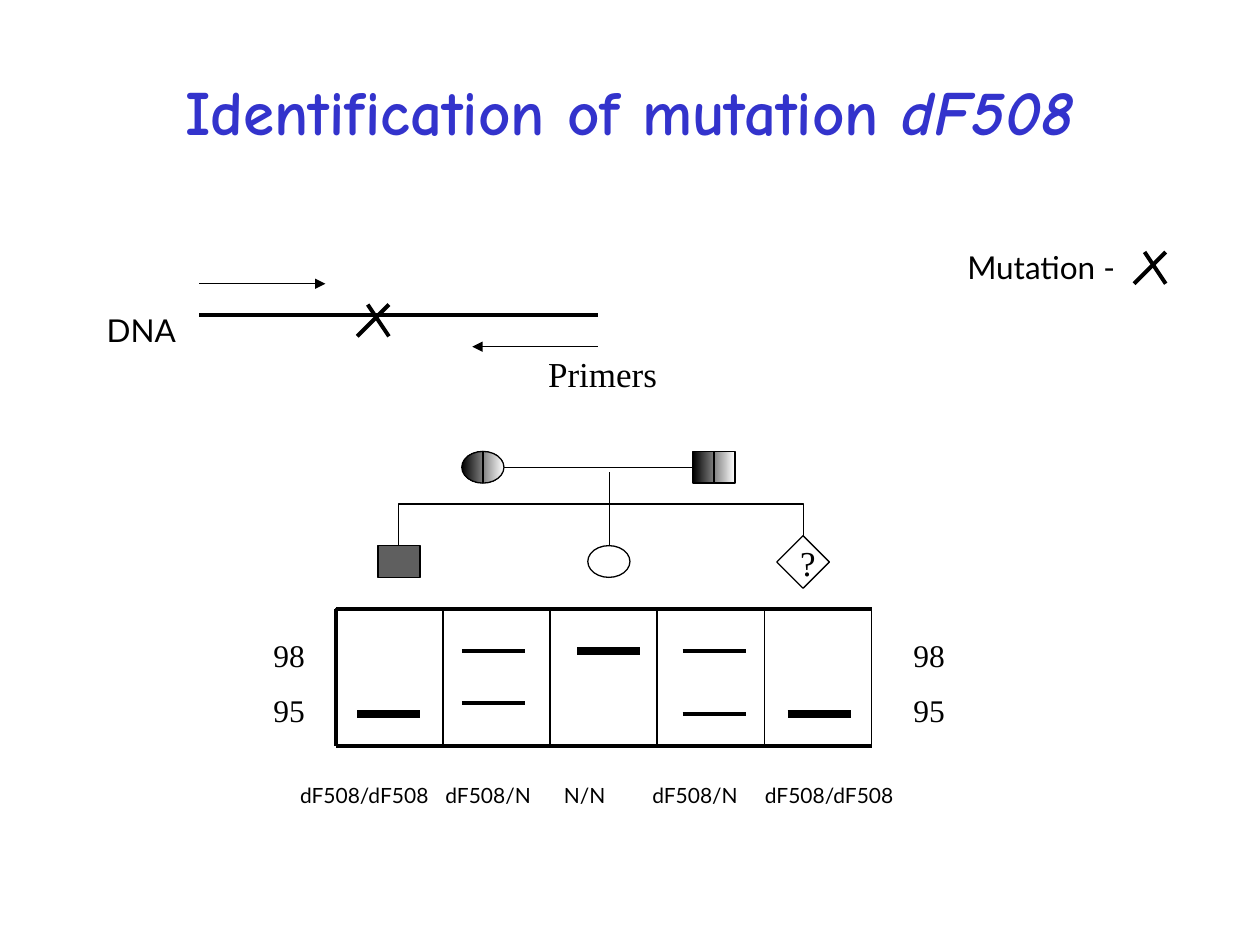
from lxml.etree import SubElement
from pptx import Presentation
from pptx.dml.color import RGBColor
from pptx.enum.shapes import MSO_CONNECTOR, MSO_SHAPE
from pptx.enum.text import MSO_ANCHOR, PP_ALIGN
from pptx.oxml.ns import qn
from pptx.util import Cm, Pt

BLACK, WHITE, GREY, BLUE = "000000", "FFFFFF", "5F5F5F", "3333CC"
SANS, SERIF, TITLE_FONT = "Lato", "Times New Roman", "Comic Neue"
THIN, LANE, THICK, HEAVY = 0.75, 1, 2.25, 4.5


def color(hex_string):
    return RGBColor.from_string(hex_string)


def write(paragraph, text, font=SANS, size=18, ink=BLACK, bold=False, italic=False):
    run = paragraph.add_run()
    run.text = text
    run.font.name, run.font.size = font, Pt(size)
    run.font.bold, run.font.italic = bold, italic
    run.font.color.rgb = color(ink)


class Board:
    """Draws on one slide; all positions are in centimetres."""

    def __init__(self, slide):
        self.slide = slide

    def title(self, left, top, width, height, parts):
        shape = self.slide.shapes.title
        shape.left, shape.top = Cm(left), Cm(top)
        shape.width, shape.height = Cm(width), Cm(height)
        shape.text_frame.vertical_anchor = MSO_ANCHOR.MIDDLE
        paragraph = shape.text_frame.paragraphs[0]
        paragraph.alignment = PP_ALIGN.CENTER
        for text, italic in parts:
            write(paragraph, text, font=TITLE_FONT, size=36, ink=BLUE, bold=True, italic=italic)

    def text(self, left, top, width, height, *lines, align=PP_ALIGN.LEFT, tabs=(), **style):
        box = self.slide.shapes.add_textbox(Cm(left), Cm(top), Cm(width), Cm(height))
        frame = box.text_frame
        frame.word_wrap = True
        for index, line in enumerate(lines):
            paragraph = frame.add_paragraph() if index else frame.paragraphs[0]
            paragraph.alignment = align
            if index:
                paragraph.space_before = Pt(10)
            if tabs:
                tab_list = SubElement(paragraph._p.get_or_add_pPr(), qn("a:tabLst"))
                for tab in tabs:
                    SubElement(tab_list, qn("a:tab"), pos=str(int(Cm(tab))), algn="l")
            write(paragraph, line, **style)

    def line(self, x1, y1, x2, y2, width=THIN, arrow=None, kind=MSO_CONNECTOR.STRAIGHT):
        """arrow names the end with a triangle: headEnd or tailEnd."""
        connector = self.slide.shapes.add_connector(kind, Cm(x1), Cm(y1), Cm(x2), Cm(y2))
        connector.line.color.rgb = color(BLACK)
        connector.line.width = Pt(width)
        properties = connector._element.spPr
        if arrow:
            SubElement(properties.find(qn("a:ln")), qn("a:" + arrow), type="triangle")
        SubElement(properties, qn("a:effectLst"))
        return connector

    def bracket(self, x1, y1, x2, y2, bar_y):
        """Elbow connector that rises to bar_y and comes down again."""
        rise, run = y1 - y2, x2 - x1
        x, y = (x1 + x2) / 2, (y1 + y2) / 2
        connector = self.line(x - rise / 2, y - run / 2, x + rise / 2, y + run / 2,
                              kind=MSO_CONNECTOR.ELBOW)
        properties = connector._element.spPr
        properties.find(qn("a:xfrm")).set("rot", str(270 * 60000))
        adjustments = properties.find(qn("a:prstGeom")).find(qn("a:avLst"))
        share = round((y1 - bar_y) / rise * 100000)
        SubElement(adjustments, qn("a:gd"), name="adj1", fmla=f"val {share}")

    def cross(self, left, top, size=0.64):
        self.line(left + size / 3, top, left + size, top + size, THICK)
        self.line(left, top + size, left + size, top, THICK)

    def shape(self, kind, left, top, width, height, fill=None):
        """fill is one colour, a pair for a gradient, or None."""
        shape = self.slide.shapes.add_shape(kind, Cm(left), Cm(top), Cm(width), Cm(height))
        shape.shadow.inherit = False
        shape.line.color.rgb = color(BLACK)
        shape.line.width = Pt(THIN)
        if fill is None:
            shape.fill.background()
        elif isinstance(fill, tuple):
            shape.fill.gradient()
            shape.fill.gradient_angle = 0
            for stop, hex_string in zip(shape.fill.gradient_stops, fill):
                stop.color.rgb = color(hex_string)
        else:
            shape.fill.solid()
            shape.fill.fore_color.rgb = color(fill)


def draw_primers(board):
    board.text(19.25, 4.88, 5.08, 1.02, "Mutation -")
    board.cross(22.86, 5.08)
    board.text(1.9, 6.15, 1.9, 1.02, "DNA")
    board.line(4.02, 6.35, 12.06, 6.35, THICK)
    board.line(4.02, 5.72, 6.56, 5.72, arrow="tailEnd")
    board.line(9.52, 6.99, 12.06, 6.99, arrow="headEnd")
    board.cross(7.2, 6.14)
    board.text(10.8, 6.99, 2.75, 1.09, "Primers", font=SERIF, size=20)


def draw_pedigree(board):
    width, height = 0.85, 0.64
    parent_y, child_y, bar_y, middle = 9.1, 11, 10.16, 12.28
    board.bracket(8.04, child_y, 16.2, 10.8, bar_y)
    board.line(10.16, 9.42, 13.97, 9.42)
    board.line(middle, 9.52, middle, bar_y)
    board.line(middle, bar_y, middle, child_y)
    for kind, left in ((MSO_SHAPE.OVAL, 9.31), (MSO_SHAPE.RECTANGLE, 13.97)):
        board.shape(kind, left, parent_y, width, height, (BLACK, WHITE))
        center = left + width / 2
        board.line(center, parent_y, center, parent_y + height)
    board.shape(MSO_SHAPE.RECTANGLE, 7.62, child_y, width, height, GREY)
    board.shape(MSO_SHAPE.OVAL, 11.85, child_y, width, height, WHITE)
    board.shape(MSO_SHAPE.DIAMOND, 15.66, 10.8, 1.06, 1.06, WHITE)
    board.text(15.88, 10.8, 0.85, 1.09, "?", font=SERIF, size=20)


def draw_gel(board):
    left, top, lane_width, height, lanes = 6.77, 12.28, 2.16, 2.75, 5
    right, bottom = left + lanes * lane_width, top + height
    for lane in range(lanes):
        board.shape(MSO_SHAPE.RECTANGLE, left + lane * lane_width, top, lane_width, height)
    for border in range(lanes + 1):
        x = left + border * lane_width
        board.line(x, top, x, bottom, LANE if border else THICK)
    for y in (top, bottom):
        board.line(left, y, right, y, THICK)

    upper, lower = 13.12, 14.39
    bands = [
        (7.2, lower, HEAVY),
        (9.31, upper, THICK), (9.31, 14.18, THICK),
        (11.64, upper, HEAVY),
        (13.76, upper, THICK), (13.76, lower, THICK),
        (15.88, lower, HEAVY),
    ]
    for x, y, weight in bands:
        board.line(x, y, x + 1.27, y, weight)

    for x in (4.88, 17.78):
        board.text(x, 12.7, 1.9, 2.16, "98", "95", align=PP_ALIGN.CENTER, font=SERIF)
    genotypes = ["", "dF508/dF508", "dF508/N", "N/N", "dF508/N", "dF508/dF508"]
    board.text(5.5, 15.66, 13.77, 0.76, "\t".join(genotypes), size=12,
               tabs=(0.3, 3.23, 5.62, 7.4, 9.67))


def main():
    presentation = Presentation()
    presentation.slide_width, presentation.slide_height = Cm(25.4), Cm(19.05)
    board = Board(presentation.slides.add_slide(presentation.slide_layouts[5]))
    board.title(0.85, 1.06, 23.7, 2.33,
                [("Identification of mutation ", False), ("dF508", True)])
    draw_primers(board)
    draw_pedigree(board)
    draw_gel(board)
    presentation.save("out.pptx")


if __name__ == "__main__":
    main()
